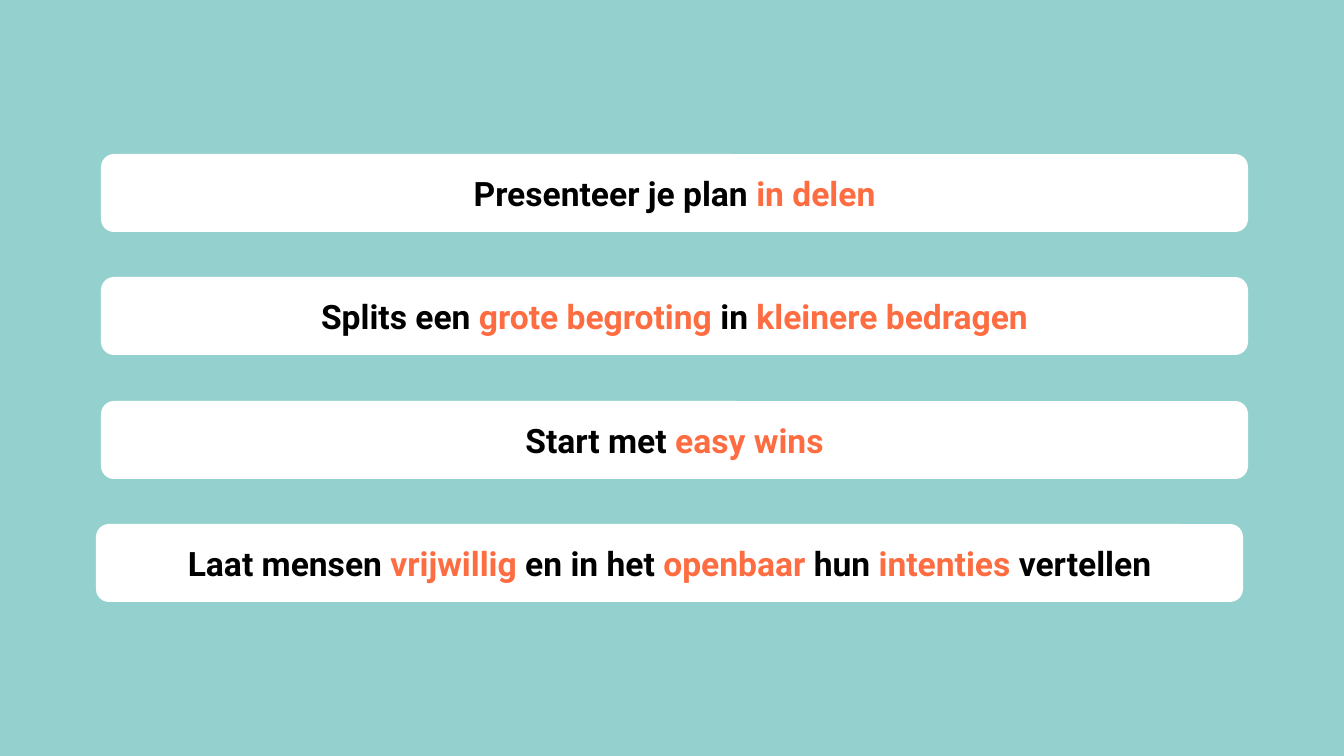
import pptx
import pptx.util
import pptx.dml.color
import pptx.enum.shapes
import pptx.enum.text

RGB = pptx.dml.color.RGBColor
TEAL = RGB(0x94, 0xD1, 0xCE)
WHITE = RGB(0xFF, 0xFF, 0xFF)
BLACK = RGB(0x00, 0x00, 0x00)
ORANGE = RGB(0xFE, 0x6D, 0x41)

# Slide size and bar layout in px
SLIDE_W, SLIDE_H = 1344, 756
BAR_W, BAR_H = 1147, 78
FIRST_TOP = 154
TWO_STEPS = 247  # distance over two bars

# Left edge and text parts of each bar: plain and highlighted parts alternate
BARS = [
    (101, ["Presenteer je plan ", "in delen"]),
    (101, ["Splits een ", "grote begroting ", "in ", "kleinere bedragen"]),
    (101, ["Start met ", "easy wins"]),
    (96, ["Laat mensen ", "vrijwillig", " en in het ", "openbaar",
          " hun ", "intenties", " vertellen"]),
]


def px(n):
    return pptx.util.Emu(round(n * 914400 / 100.8))


def set_background(s, color):
    fill = s.background.fill
    fill.solid()
    fill.fore_color.rgb = color


def add_highlighted_text(p, parts):
    p.alignment = pptx.enum.text.PP_ALIGN.CENTER
    p.font.name = "Roboto"
    p.font.size = pptx.util.Pt(24)
    p.font.bold = True
    for i, part in enumerate(parts):
        r = p.add_run()
        r.text = part
        r.font.color.rgb = ORANGE if i % 2 else BLACK


def add_bar(s, left, top, parts):
    sp = s.shapes.add_shape(pptx.enum.shapes.MSO_SHAPE.ROUNDED_RECTANGLE,
                            px(left), px(top), px(BAR_W), px(BAR_H))
    sp.shadow.inherit = False
    sp.fill.solid()
    sp.fill.fore_color.rgb = WHITE
    sp.line.fill.background()
    tf = sp.text_frame
    tf.word_wrap = True
    tf.vertical_anchor = pptx.enum.text.MSO_ANCHOR.MIDDLE
    add_highlighted_text(tf.paragraphs[0], parts)


def main():
    prs = pptx.Presentation()
    prs.slide_width, prs.slide_height = px(SLIDE_W), px(SLIDE_H)
    s = prs.slides.add_slide(prs.slide_layouts[6])
    set_background(s, TEAL)

    # Stack of evenly spaced bars
    for i, (left, parts) in enumerate(BARS):
        add_bar(s, left, FIRST_TOP + i * TWO_STEPS // 2, parts)

    prs.save("out.pptx")


if __name__ == "__main__":
    main()
